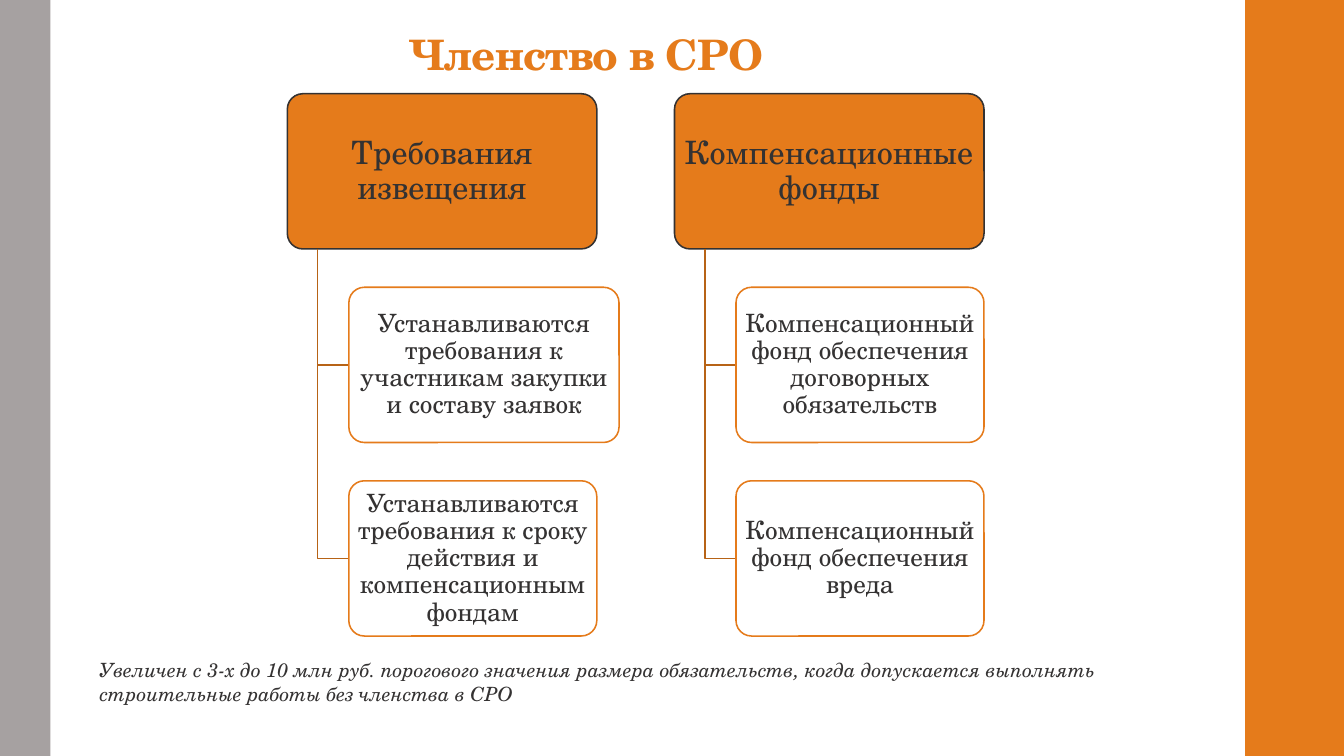
"""Build a slide on SRO membership: two heads, each with a branch of two boxes."""
from dataclasses import dataclass

from pptx import Presentation
from pptx.dml.color import RGBColor
from pptx.enum.shapes import MSO_SHAPE
from pptx.enum.text import MSO_ANCHOR, MSO_AUTO_SIZE, PP_ALIGN
from pptx.shapes.autoshape import Shape
from pptx.slide import Slide
from pptx.text.text import TextFrame
from pptx.util import Inches, Pt

RECT = MSO_SHAPE.RECTANGLE
ROUND = MSO_SHAPE.ROUNDED_RECTANGLE
LEFT, CENTER = PP_ALIGN.LEFT, PP_ALIGN.CENTER
TOP, MIDDLE, BOTTOM = MSO_ANCHOR.TOP, MSO_ANCHOR.MIDDLE, MSO_ANCHOR.BOTTOM
NO_FIT = MSO_AUTO_SIZE.NONE


@dataclass(frozen=True)
class Theme:
    """Colours, font and type sizes."""
    accent: str = "E57B1B"
    branch: str = "B76316"
    dark: str = "343232"
    gray: str = "A6A1A1"
    white: str = "FFFFFF"
    font: str = "TeX Gyre Schola"
    title: float = 30
    head: float = 23
    item: float = 18
    note: float = 14
    line: float = 1.1


@dataclass(frozen=True)
class Box:
    """Place and size in inches."""
    x: float
    y: float
    w: float
    h: float


@dataclass(frozen=True)
class Item:
    """A lower box with its text and width."""
    text: str
    width: float = 2.46


@dataclass(frozen=True)
class Group:
    """A head with its items."""
    head: str
    items: tuple[Item, ...]


THEME = Theme()
ROW_TOP, ROW_H, ROW_STEP = 0.93, 1.54, 1.92
COL_LEFT, COL_STEP, HEAD_W = 2.85, 3.84, 3.07
STEM, INDENT = 0.3, 0.61

BARS = (
    (Box(12.35, 0, 1, 7.5), THEME.accent),
    (Box(0, 0, 0.5, 7.5), THEME.gray),
)
GROUPS = (
    Group("Требования извещения", (
        Item("Устанавливаются требования к участникам закупки и составу заявок", 2.68),
        Item("Устанавливаются требования к сроку действия и компенсационным фондам"),
    )),
    Group("Компенсационные фонды", (
        Item("Компенсационный фонд обеспечения договорных обязательств"),
        Item("Компенсационный фонд обеспечения вреда"),
    )),
)
NOTE = ("Увеличен с 3-х до 10 млн руб. порогового значения размера обязательств, "
        "когда допускается выполнять строительные работы без членства в СРО")


def paint(hue: str) -> RGBColor:
    """Turn a hex string into a colour."""
    return RGBColor.from_string(hue)


def place(box: Box) -> tuple[Inches, ...]:
    """Give a box as four lengths."""
    return Inches(box.x), Inches(box.y), Inches(box.w), Inches(box.h)


def write(frame: TextFrame, text: str, size: float, hue: str = THEME.dark,
          align: PP_ALIGN = CENTER, anchor: MSO_ANCHOR = MIDDLE,
          pads: tuple[float, float, float] = (0.03, 0.03, 0.03), gap: float = 0.9,
          bold: bool = False, slant: bool = False, track: int = 0) -> None:
    """Write one run into a text frame."""
    frame.word_wrap = True
    frame.auto_size = NO_FIT
    frame.vertical_anchor = anchor
    side, top, base = pads
    frame.margin_left = frame.margin_right = Inches(side)
    frame.margin_top, frame.margin_bottom = Inches(top), Inches(base)
    para = frame.paragraphs[0]
    para.alignment = align
    para.line_spacing = gap
    run = para.add_run()
    run.text = text
    font = run.font
    font.name, font.size = THEME.font, Pt(size)
    font.bold, font.italic = bold, slant
    font.color.rgb = paint(hue)
    if track:
        font._element.set("spc", str(track))


def panel(slide: Slide, kind: MSO_SHAPE, box: Box, fill: str, edge: str = "") -> Shape:
    """Add a filled shape, with an edge if a colour is given."""
    shape = slide.shapes.add_shape(kind, *place(box))
    shape.shadow.inherit = False
    shape.fill.solid()
    shape.fill.fore_color.rgb = paint(fill)
    if edge:
        shape.line.color.rgb = paint(edge)
        shape.line.width = Pt(THEME.line)
    else:
        shape.line.fill.background()
    return shape


def card(slide: Slide, box: Box, text: str, size: float, fill: str, edge: str) -> None:
    """Add a round box with centred text."""
    shape = panel(slide, ROUND, box, fill, edge)
    shape.adjustments[0] = 0.1
    write(shape.text_frame, text, size)


def elbow(slide: Slide, x: float, top: float, end: float, right: float) -> None:
    """Add a line that runs down and then right."""
    build = slide.shapes.build_freeform(Inches(x), Inches(top))
    build.add_line_segments(
        [(Inches(x), Inches(end)), (Inches(right), Inches(end))], close=False)
    shape = build.convert_to_shape()
    shape.shadow.inherit = False
    shape.fill.background()
    shape.line.color.rgb = paint(THEME.branch)
    shape.line.width = Pt(THEME.line)


def tree(slide: Slide, x: float, group: Group) -> None:
    """Draw a head, its items and the lines between them."""
    card(slide, Box(x, ROW_TOP, HEAD_W, ROW_H), group.head,
         THEME.head, THEME.accent, THEME.dark)
    for row, item in enumerate(group.items, start=1):
        y = ROW_TOP + row * ROW_STEP
        elbow(slide, x + STEM, ROW_TOP + ROW_H, y + ROW_H / 2, x + INDENT)
        card(slide, Box(x + INDENT, y, item.width, ROW_H), item.text,
             THEME.item, THEME.white, THEME.accent)


def main() -> None:
    """Build and save the slide."""
    deck = Presentation()
    deck.slide_width, deck.slide_height = Inches(13.33), Inches(7.5)
    slide = deck.slides.add_slide(deck.slide_layouts[5])
    for box, hue in BARS:
        panel(slide, RECT, box, hue)
    title = slide.shapes.title
    title.left, title.top, title.width, title.height = place(Box(3.96, 0.13, 5.23, 0.71))
    write(title.text_frame, "Членство в СРО", THEME.title, THEME.accent, LEFT, BOTTOM,
          (0.1, 0.03, 0.05), bold=True, track=-50)
    for col, group in enumerate(GROUPS):
        tree(slide, COL_LEFT + col * COL_STEP, group)
    note = slide.shapes.add_textbox(*place(Box(0.89, 6.48, 11.39, 0.57)))
    write(note.text_frame, NOTE, THEME.note, align=LEFT, anchor=TOP,
          pads=(0.1, 0.05, 0.05), gap=1.0, slant=True)
    deck.save("out.pptx")


if __name__ == "__main__":
    main()
